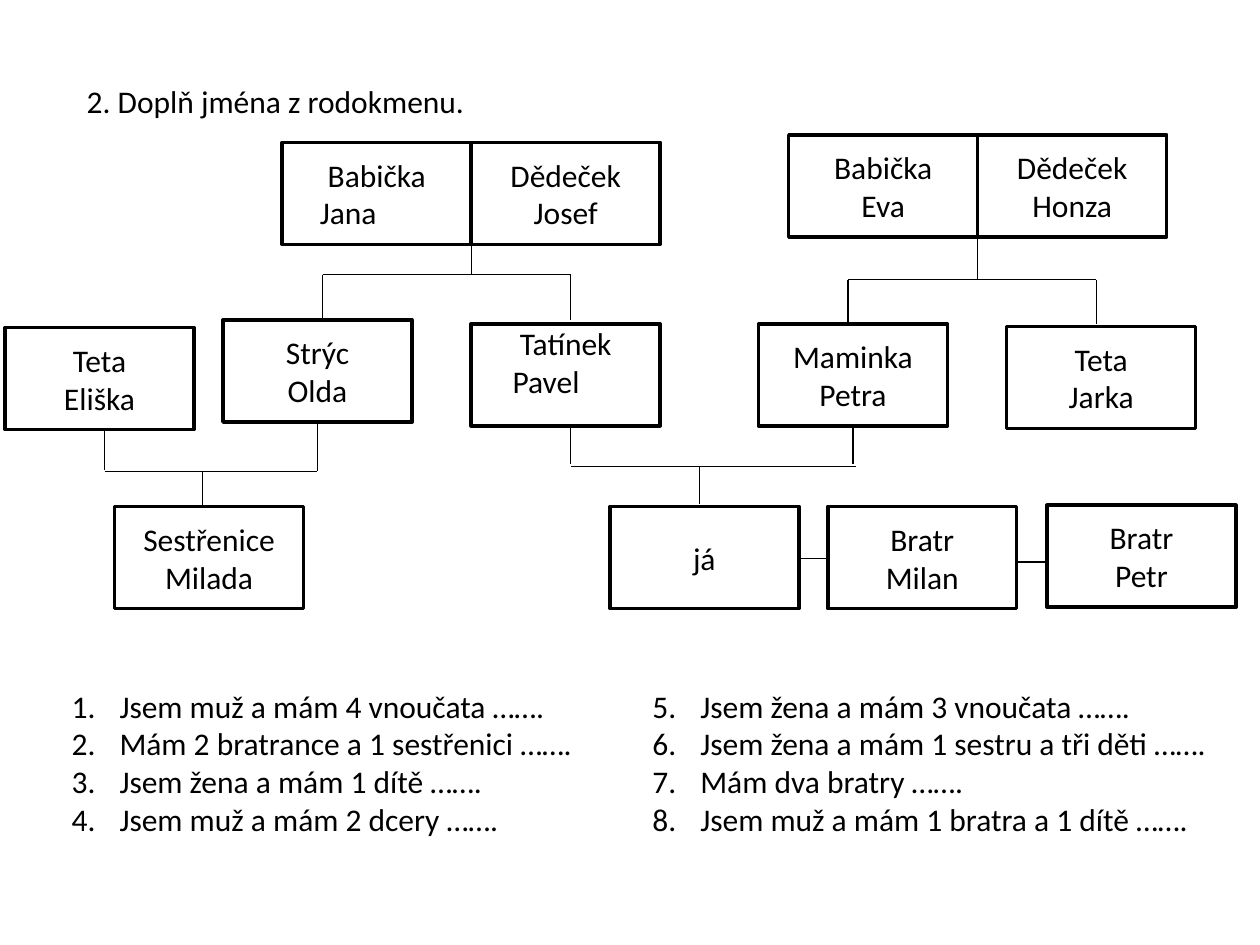
import pptx
import pptx.util
import pptx.dml.color
import pptx.enum.shapes
import pptx.enum.text
import lxml.etree
from pptx.util import Inches

BLACK, WHITE = "000000", "FFFFFF"
BOX_WIDTH, BOX_HEIGHT = 1.5, 0.81


def color(hex_code):
    return pptx.dml.color.RGBColor.from_string(hex_code)


def style_text(frame):
    for paragraph in frame.paragraphs:
        for run in paragraph.runs:
            run.font.size = pptx.util.Pt(18)
            run.font.name = "Calibri"
            run.font.color.rgb = color(BLACK)


presentation = pptx.Presentation()
presentation.slide_width = Inches(10)
presentation.slide_height = Inches(7.5)
slide = presentation.slides.add_slide(presentation.slide_layouts[6])

# Heading
heading = slide.shapes.add_textbox(Inches(0.59), Inches(0.6), Inches(3.23), Inches(0.4))
heading.text_frame.word_wrap = False
heading.text_frame.text = "2. Doplň jména z rodokmenu."
style_text(heading.text_frame)

# Family ties: x1, y1, x2, y2
ties = [
    # Jana and Josef to their sons
    (3.74, 1.87, 3.74, 2.18), (2.56, 2.18, 4.53, 2.18),
    (2.56, 2.18, 2.56, 2.53), (4.53, 2.18, 4.53, 2.54),
    # Eva and Honza to their daughters
    (7.76, 1.86, 7.76, 2.22), (6.73, 2.22, 8.7, 2.22),
    (6.73, 2.22, 6.73, 2.57), (8.7, 2.22, 8.7, 2.57),
    # Eliška and Olda to Milada
    (0.83, 3.41, 0.83, 3.73), (2.52, 3.36, 2.52, 3.74),
    (0.83, 3.74, 2.52, 3.74), (1.61, 3.74, 1.61, 4.02),
    # Pavel and Petra to their children
    (4.53, 3.38, 4.53, 3.68), (6.77, 3.38, 6.77, 3.68),
    (4.53, 3.7, 6.79, 3.7), (5.55, 3.7, 5.55, 4),
    # Siblings
    (6.34, 4.43, 6.57, 4.43), (8.07, 4.46, 8.31, 4.46),
]
for ends in ties:
    tie = slide.shapes.add_connector(
        pptx.enum.shapes.MSO_CONNECTOR.STRAIGHT, *[Inches(end) for end in ends])
    tie.line.color.rgb = color(BLACK)
    tie.line.width = pptx.util.Pt(0.75)
    lxml.etree.SubElement(tie._element.spPr, pptx.oxml.ns.qn("a:effectLst"))

# Relatives: left, top, text
relatives = [
    (2.24, 1.13, "Babička\nJana"), (3.74, 1.13, "Dědeček\nJosef"),
    (6.26, 1.07, "Babička\nEva"), (7.76, 1.07, "Dědeček\nHonza"),
    (0.04, 2.6, "Teta\nEliška"), (1.77, 2.54, "Strýc\nOlda"),
    (3.74, 2.57, "Tatínek\nPavel"), (6.02, 2.57, "Maminka\nPetra"),
    (7.99, 2.59, "Teta\nJarka"), (0.91, 4.02, "Sestřenice\nMilada"),
    (4.84, 4.02, "já"), (6.57, 4.02, "Bratr\nMilan"), (8.31, 4.01, "Bratr\nPetr"),
]
# Names set from the left edge instead of centred
name_indents = {"Jana": 0.2, "Pavel": 0.23}

for left, top, label in relatives:
    relative = slide.shapes.add_shape(
        pptx.enum.shapes.MSO_SHAPE.RECTANGLE,
        Inches(left), Inches(top), Inches(BOX_WIDTH), Inches(BOX_HEIGHT))
    relative.shadow.inherit = False
    relative.fill.solid()
    relative.fill.fore_color.rgb = color(WHITE)
    relative.line.color.rgb = color(BLACK)
    relative.line.width = pptx.util.Pt(2)
    frame = relative.text_frame
    frame.text = label
    frame.vertical_anchor = pptx.enum.text.MSO_ANCHOR.MIDDLE
    if "Pavel" in label:
        frame.vertical_anchor = pptx.enum.text.MSO_ANCHOR.TOP
        frame.margin_top = Inches(0)
    for paragraph in frame.paragraphs:
        paragraph.alignment = pptx.enum.text.PP_ALIGN.CENTER
        if paragraph.text in name_indents:
            paragraph.alignment = pptx.enum.text.PP_ALIGN.LEFT
            indent = Inches(name_indents[paragraph.text])
            paragraph._p.get_or_add_pPr().set("marL", str(indent))
    style_text(frame)

# Numbered riddles: left, width, first number, lines
riddle_columns = [
    (0.47, 4.21, 1, ["Jsem muž a mám 4 vnoučata …….",
                     "Mám 2 bratrance a 1 sestřenici …….",
                     "Jsem žena a mám 1 dítě …….",
                     "Jsem muž a mám 2 dcery ……."]),
    (5.08, 4.64, 5, ["Jsem žena a mám 3 vnoučata …….",
                     "Jsem žena a mám 1 sestru a tři děti …….",
                     "Mám dva bratry …….",
                     "Jsem muž a mám 1 bratra a 1 dítě ……."]),
]
for left, width, first_number, lines in riddle_columns:
    riddles = slide.shapes.add_textbox(Inches(left), Inches(5.4), Inches(width), Inches(1.31))
    riddles.text_frame.word_wrap = False
    riddles.text_frame.text = "\n".join(lines)
    for paragraph in riddles.text_frame.paragraphs:
        properties = paragraph._p.get_or_add_pPr()
        properties.set("marL", str(Inches(0.38)))
        properties.set("indent", str(-Inches(0.38)))
        numbering = lxml.etree.SubElement(properties, pptx.oxml.ns.qn("a:buAutoNum"))
        numbering.set("type", "arabicPeriod")
        numbering.set("startAt", str(first_number))
    style_text(riddles.text_frame)

presentation.save("out.pptx")
